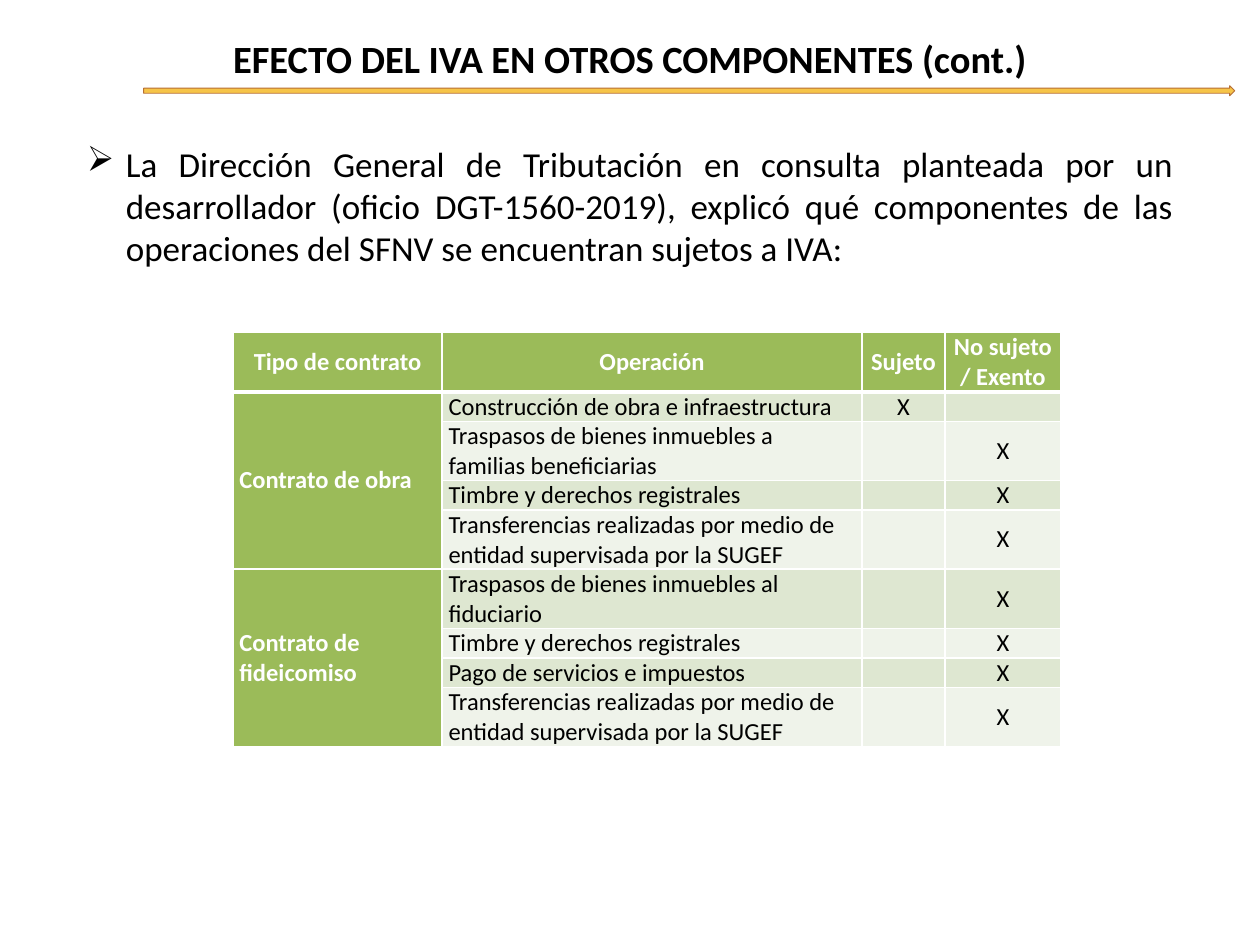
import pptx
import pptx.dml.color
import pptx.enum.shapes
import pptx.enum.text
import pptx.oxml
import pptx.oxml.ns
import pptx.oxml.xmlchemy
import pptx.util
from dataclasses import dataclass

Inches = pptx.util.Inches
Pt = pptx.util.Pt
ALIGN = pptx.enum.text.PP_ALIGN
ANCHOR = pptx.enum.text.MSO_ANCHOR
OxmlElement = pptx.oxml.xmlchemy.OxmlElement


@dataclass(frozen=True)
class Theme:
    font: str = "Calibri"
    title_size: int = 22
    body_size: int = 20
    table_size: int = 14
    black: str = "000000"
    white: str = "FFFFFF"
    green: str = "9BBB59"
    bands: tuple = ("DEE7D1", "EFF3EA")
    arrow_fill: str = "F6C448"
    arrow_line: str = "B76F34"


THEME = Theme()

HEADERS = ["Tipo de contrato", "Operación", "Sujeto", "No sujeto\n/ Exento"]
TRANSFERS = "Transferencias realizadas por medio de entidad supervisada por la SUGEF"
STAMPS = "Timbre y derechos registrales"
# Contract -> (operation, subject to tax, text lines in the row)
CONTRACTS = {
    "Contrato de obra": [
        ("Construcción de obra e infraestructura", True, 1),
        ("Traspasos de bienes inmuebles a familias beneficiarias", False, 2),
        (STAMPS, False, 1),
        (TRANSFERS, False, 2),
    ],
    "Contrato de fideicomiso": [
        ("Traspasos de bienes inmuebles al fiduciario", False, 2),
        (STAMPS, False, 1),
        ("Pago de servicios e impuestos", False, 1),
        (TRANSFERS, False, 2),
    ],
}
COLUMN_WIDTHS = [1.66, 3.33, 0.66, 0.92]
ROW_HEIGHTS = {1: 0.23, 2: 0.47}


def rgb(value):
    return pptx.dml.color.RGBColor.from_string(value)


def set_attributes(obj, values):
    for name, value in values.items():
        setattr(obj, name, value)


def add_run(p, text, size, color=THEME.black, bold=False):
    r = p.add_run()
    r.text = text
    set_attributes(r.font, {"name": THEME.font, "size": Pt(size), "bold": bold})
    r.font.color.rgb = rgb(color)


def add_text(slide, box, text, size, align, bold=False, bullet=None):
    sp = slide.shapes.add_textbox(*map(Inches, box))
    tf = sp.text_frame
    tf.word_wrap = True
    p = tf.paragraphs[0]
    if bullet:
        add_bullet(p, bullet, Inches(0.31))
    p.alignment = align
    add_run(p, text, size, bold=bold)


def add_bullet(p, char, indent):
    pPr = p._p.get_or_add_pPr()
    pPr.set("marL", str(indent))
    pPr.set("indent", str(-indent))
    bullet = OxmlElement("a:buChar")
    bullet.set("char", char)
    pPr.append(bullet)


def add_title_arrow(slide):
    sp = slide.shapes.add_shape(
        pptx.enum.shapes.MSO_SHAPE.RIGHT_ARROW,
        Inches(1.14), Inches(0.68), Inches(8.66), Inches(0.08))
    sp.shadow.inherit = False
    sp.fill.solid()
    sp.fill.fore_color.rgb = rgb(THEME.arrow_fill)
    sp.line.color.rgb = rgb(THEME.arrow_line)
    sp.line.width = Pt(0.5)


def set_borders(cell, widths):
    """Draw white borders; widths are in points, in left, right, top, bottom order."""
    tcPr = cell._tc.get_or_add_tcPr()
    for i, (side, width) in enumerate(zip("LRTB", widths)):
        tcPr.insert(i, pptx.oxml.parse_xml(
            f'<a:ln{side} {pptx.oxml.ns.nsdecls("a")} w="{Pt(width)}"><a:solidFill>'
            f'<a:srgbClr val="{THEME.white}"/></a:solidFill></a:ln{side}>'))


def fill_cell(cell, text, fill, align=ALIGN.LEFT, color=THEME.black, bold=False):
    set_attributes(cell, {
        "margin_left": Inches(0.05), "margin_right": Inches(0.05),
        "margin_top": 0, "margin_bottom": 0, "vertical_anchor": ANCHOR.MIDDLE})
    cell.fill.solid()
    cell.fill.fore_color.rgb = rgb(fill)
    tf = cell.text_frame
    for i, line in enumerate(text.split("\n")):
        p = tf.add_paragraph() if i else tf.paragraphs[0]
        p.alignment = align
        if line:
            add_run(p, line, THEME.table_size, color, bold)
        else:
            # An empty cell must not be taller than its neighbours' text
            end = OxmlElement("a:endParaRPr")
            end.set("sz", str(THEME.table_size * 100))
            p._p.append(end)


def add_contract_table(slide):
    operations = [op for ops in CONTRACTS.values() for op in ops]
    heights = [ROW_HEIGHTS[n] for n in [2] + [op[2] for op in operations]]
    table = slide.shapes.add_table(
        len(heights), len(COLUMN_WIDTHS), Inches(1.85), Inches(2.64),
        Inches(sum(COLUMN_WIDTHS)), Inches(sum(heights))).table
    for column, width in zip(table.columns, COLUMN_WIDTHS):
        column.width = Inches(width)
    for row, height in zip(table.rows, heights):
        row.height = Inches(height)

    heading = {"fill": THEME.green, "color": THEME.white, "bold": True}
    for col, text in enumerate(HEADERS):
        fill_cell(table.cell(0, col), text, align=ALIGN.CENTER, **heading)

    for row, (operation, subject, _) in enumerate(operations, 1):
        band = THEME.bands[(row - 1) % 2]
        fill_cell(table.cell(row, 1), operation, band)
        for col, marked in ((2, subject), (3, not subject)):
            fill_cell(table.cell(row, col), "X" if marked else "", band, ALIGN.CENTER)

    first = 1
    for contract, ops in CONTRACTS.items():
        last = first + len(ops) - 1
        for row in range(first, last + 1):
            fill_cell(table.cell(row, 0), contract if row == first else "", **heading)
        table.cell(first, 0).merge(table.cell(last, 0))
        first = last + 1

    for row in range(len(heights)):
        widths = (1, 1, 3 if row == 1 else 1, 3 if row == 0 else 1)
        for col in range(len(COLUMN_WIDTHS)):
            set_borders(table.cell(row, col), widths)


def main():
    prs = pptx.Presentation()
    prs.slide_width, prs.slide_height = Inches(10), Inches(7.5)
    slide = prs.slides.add_slide(prs.slide_layouts[6])
    add_text(slide, (0, 0.23, 10, 0.47), "EFECTO DEL IVA EN OTROS COMPONENTES (cont.)",
             THEME.title_size, ALIGN.CENTER, bold=True)
    add_title_arrow(slide)
    add_text(slide, (0.59, 1.08, 8.82, 2.46),
             "La Dirección General de Tributación en consulta planteada por un "
             "desarrollador (oficio DGT-1560-2019), explicó qué componentes de las "
             "operaciones del SFNV se encuentran sujetos a IVA:",
             THEME.body_size, ALIGN.JUSTIFY, bullet="➢")
    add_contract_table(slide)
    prs.save("out.pptx")


if __name__ == "__main__":
    main()
